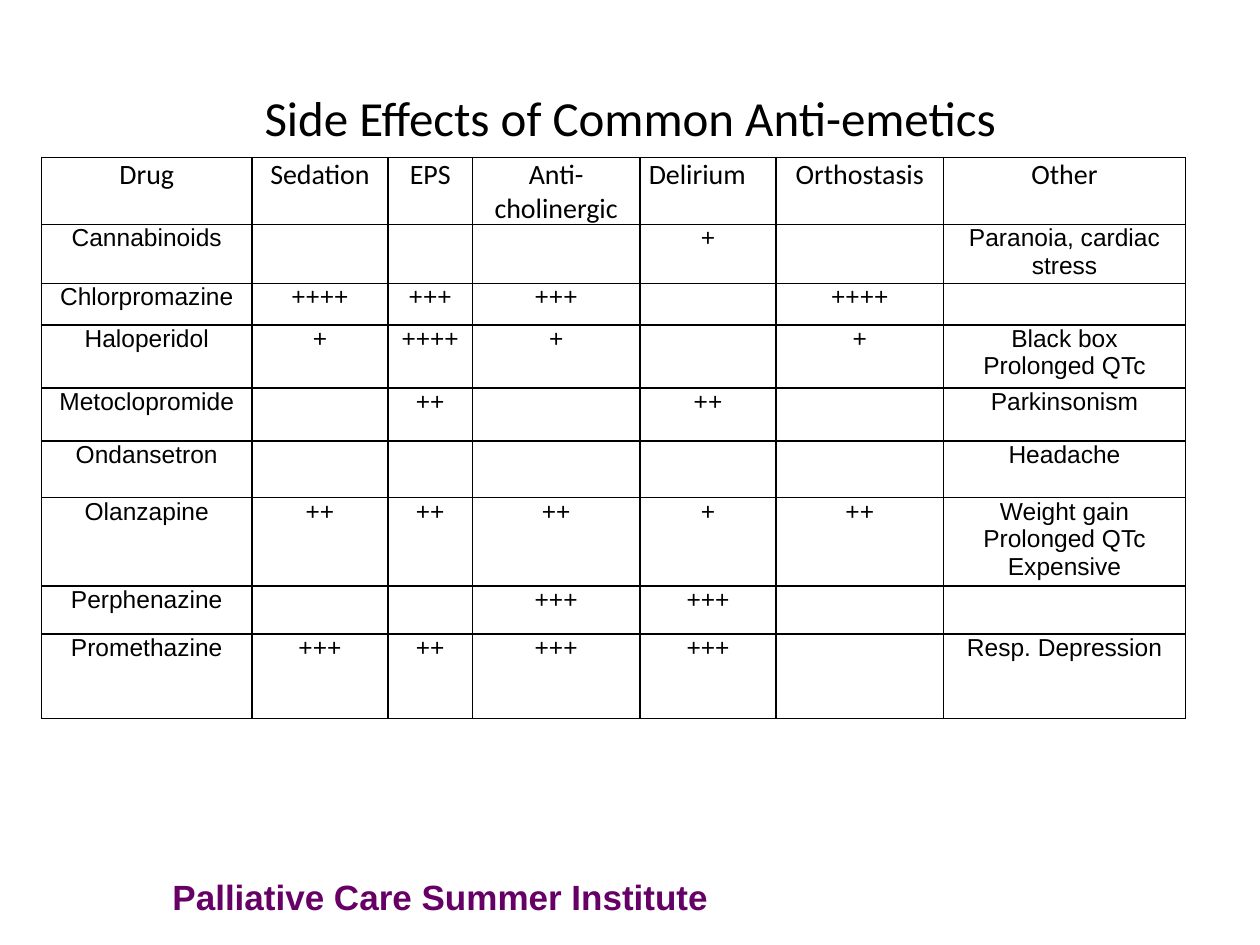
from lxml import etree
from pptx import Presentation
from pptx.dml.color import RGBColor
from pptx.enum.text import MSO_ANCHOR, MSO_AUTO_SIZE, PP_ALIGN
from pptx.oxml import parse_xml
from pptx.oxml.ns import nsdecls, qn
from pptx.util import Inches, Pt

CENTER, LEFT = PP_ALIGN.CENTER, PP_ALIGN.LEFT
MIDDLE, TOP = MSO_ANCHOR.MIDDLE, MSO_ANCHOR.TOP
FIT_SHAPE = MSO_AUTO_SIZE.SHAPE_TO_FIT_TEXT

THEME = {
    "ink": RGBColor(0, 0, 0),
    "institute": RGBColor(0x66, 0, 0x66),
    "border": "000000",
    "heading_font": "Calibri",
    "body_font": "Arial",
    "title_size": Pt(28),
    "header_size": Pt(16),
    "body_size": Pt(14),
    "institute_size": Pt(20),
    "border_width": Pt(1),
}

HEADERS = ["Drug", "Sedation", "EPS", "Anti-\ncholinergic", "Delirium", "Orthostasis", "Other"]
DRUGS = [
    ["Cannabinoids", "", "", "", "+", "", "Paranoia, cardiac stress"],
    ["Chlorpromazine", "++++", "+++", "+++", "", "++++", ""],
    ["Haloperidol", "+", "++++", "+", "", "+", "Black box\nProlonged QTc"],
    ["Metoclopromide", "", "++", "", "++", "", "Parkinsonism"],
    ["Ondansetron", "", "", "", "", "", "Headache"],
    ["Olanzapine", "++", "++", "++", "+", "++", "Weight gain\nProlonged QTc\nExpensive"],
    ["Perphenazine", "", "", "+++", "+++", "", ""],
    ["Promethazine", "+++", "++", "+++", "+++", "", "Resp. Depression"],
]
COLUMN_WIDTHS = [1.67, 1.08, 0.67, 1.33, 1.08, 1.33, 1.92]
ROW_HEIGHTS = [0.42, 0.33, 0.33, 0.5, 0.42, 0.45, 0.67, 0.38, 0.67]


def style_text(frame, font_name, size, color, align, bold=False):
    for paragraph in frame.paragraphs:
        paragraph.alignment = align
        paragraph.font.name = font_name
        paragraph.font.size = size
        paragraph.font.color.rgb = color
        paragraph.font.bold = bold


def add_borders(cell):
    properties = cell._tc.get_or_add_tcPr()
    for position, side in enumerate(("lnL", "lnR", "lnT", "lnB")):
        line = parse_xml(f'<a:{side} {nsdecls("a")} w="{THEME["border_width"]}"/>')
        fill = etree.SubElement(line, qn("a:solidFill"))
        etree.SubElement(fill, qn("a:srgbClr"), val=THEME["border"])
        properties.insert(position, line)


prs = Presentation()
prs.slide_width, prs.slide_height = Inches(10), Inches(7.5)
slide = prs.slides.add_slide(prs.slide_layouts[5])

institute = slide.shapes.add_textbox(Inches(1.27), Inches(6.9), Inches(4.48), Inches(0.44))
institute.text_frame.word_wrap = False
institute.text_frame.auto_size = FIT_SHAPE
institute.text_frame.text = "Palliative Care Summer Institute"
style_text(institute.text_frame, THEME["body_font"], THEME["institute_size"],
           THEME["institute"], LEFT, bold=True)

title = slide.shapes.title
title.left, title.top, title.width, title.height = Inches(0.5), Inches(0.3), Inches(9), Inches(1.25)
title.text_frame.text = "Side Effects of Common Anti-emetics"
title.text_frame.vertical_anchor = MIDDLE
style_text(title.text_frame, THEME["heading_font"], THEME["title_size"], THEME["ink"], CENTER)

side_effects = slide.shapes.add_table(
    len(ROW_HEIGHTS), len(COLUMN_WIDTHS), Inches(0.33), Inches(1.25),
    Inches(sum(COLUMN_WIDTHS)), Inches(sum(ROW_HEIGHTS))).table
side_effects.first_row = False
side_effects.horz_banding = False
for column, width in zip(side_effects.columns, COLUMN_WIDTHS):
    column.width = Inches(width)
for row, height in zip(side_effects.rows, ROW_HEIGHTS):
    row.height = Inches(height)

for row_index, entries in enumerate([HEADERS] + DRUGS):
    is_header = row_index == 0
    font_name = THEME["heading_font"] if is_header else THEME["body_font"]
    size = THEME["header_size"] if is_header else THEME["body_size"]
    for column_index, entry in enumerate(entries):
        cell = side_effects.cell(row_index, column_index)
        cell.text = entry
        cell.margin_left = cell.margin_right = Inches(0.07)
        cell.margin_top = cell.margin_bottom = 0
        cell.vertical_anchor = TOP
        cell.fill.background()
        add_borders(cell)
        align = LEFT if entry == "Delirium" else CENTER
        style_text(cell.text_frame, font_name, size, THEME["ink"], align)

prs.save("out.pptx")
